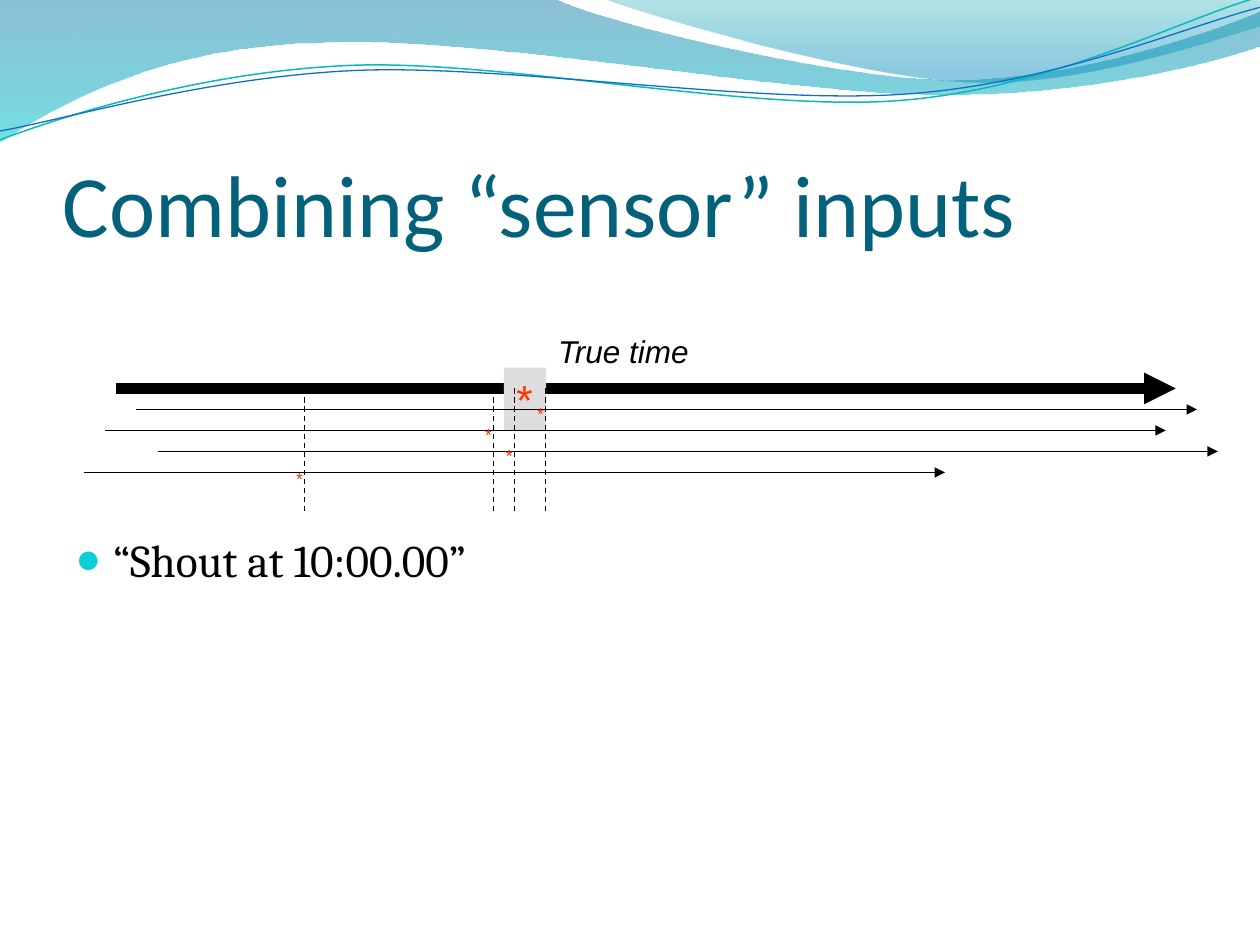
"""Build a slide on combining sensor inputs along a shared time line."""
import dataclasses

import lxml.etree
import pptx
import pptx.dml.color
import pptx.enum.dml
import pptx.enum.shapes
import pptx.enum.text
import pptx.oxml
import pptx.oxml.ns
import pptx.util

Cm = pptx.util.Cm
Pt = pptx.util.Pt
RGB = pptx.dml.color.RGBColor.from_string
qn = pptx.oxml.ns.qn


@dataclasses.dataclass(frozen=True)
class Theme:
    title: str = "04617B"
    ink: str = "000000"
    mark: str = "FF3300"
    window: str = "DDDDDD"
    bullet: str = "0BD0D9"
    teal_line: str = "0AB8BF"
    blue_line: str = "0F6FC6"
    left_wave: tuple = ((0, "0074A1", 45), (1, "00C6CF", 55))
    right_wave: tuple = ((0, "00A1A9", 30), (0.8, "008BBF", 45))
    title_size: int = 50
    body_size: int = 26
    mark_size: int = 24
    label_size: int = 18
    small_size: int = 10


theme = Theme()
deck = pptx.Presentation()
deck.slide_width, deck.slide_height = Cm(25.4), Cm(19.05)
page = deck.slides.add_slide(deck.slide_layouts[6])


def write(box, text, font, size, color, italic=False):
    frame = box.text_frame
    frame.word_wrap = True
    frame.text = text
    para = frame.paragraphs[0]
    para.alignment = pptx.enum.text.PP_ALIGN.LEFT
    span = para.runs[0]
    span.font.name, span.font.size = font, Pt(size)
    span.font.italic = italic
    span.font.color.rgb = RGB(color)
    return para


def draw_line(start, end, width, arrow=False):
    line = page.shapes.add_connector(
        pptx.enum.shapes.MSO_CONNECTOR.STRAIGHT, *(Cm(v) for v in start + end))
    line.line.color.rgb = RGB(theme.ink)
    line.line.width = Pt(width)
    if arrow:
        outline = line.line._get_or_add_ln()
        lxml.etree.SubElement(outline, qn("a:tailEnd"), type="triangle")
    else:
        line.line.dash_style = pptx.enum.dml.MSO_LINE.DASH
    lxml.etree.SubElement(line._element.spPr, qn("a:effectLst"))


waves = [
    ((0, -0.03), [
        [(11.18, -0.03)],
        [(12.09, 0.43), (16.87, 1.6), (19.25, 1.6)],
        [(21.67, 1.6), (24.33, 0.66), (25.4, 0.23)],
        [(25.43, 0.91)],
        [(24.97, 1.12), (22.1, 1.93), (18.95, 1.91)],
        [(15.8, 1.91), (9.7, 0.71), (6.53, 0.86)],
        [(3.28, 0.89), (1.17, 2.11), (-0.03, 2.87)]], theme.left_wave, None),
    ((12.17, -0.03), [
        [(12.93, 0.28), (17.32, 1.57), (19.53, 1.65)],
        [(21.74, 1.75), (24.41, 0.81), (25.4, 0.53)],
        [(25.4, 0)]], theme.right_wave, None),
    ((0, 2.82), [
        [(1.22, 2.36), (4.01, 1.45), (7.04, 1.32)],
        [(10.03, 1.19), (15.06, 2.26), (18.11, 2.03)],
        [(21.16, 1.8), (23.83, 0.38), (25.35, -0.05)]],
        None, (theme.teal_line, 0.85)),
    ((0, 2.64), [
        [(1.19, 2.44), (4.17, 1.55), (7.19, 1.42)],
        [(10.24, 1.3), (15.16, 2.11), (18.21, 1.9)],
        [(21.23, 1.7), (23.9, 0.53), (25.4, 0.15)]],
        None, (theme.blue_line, 0.75)),
]
for start, segments, gradient, stroke in waves:
    builder = page.shapes.build_freeform(Cm(start[0]), Cm(start[1]))
    builder.add_line_segments(
        [(Cm(x), Cm(y)) for segment in segments for x, y in segment],
        close=gradient is not None)
    wave = builder.convert_to_shape()
    wave.shadow.inherit = False
    steps = iter(list(wave._element.iter(qn("a:lnTo"))))
    for segment in segments:
        group = [next(steps) for _ in segment]
        if len(group) == 3:
            group[0].tag = qn("a:cubicBezTo")
            for step in group[1:]:
                group[0].append(step[0])
                step.getparent().remove(step)
    if gradient:
        wave.line.fill.background()
        wave.fill.gradient()
        wave.fill.gradient_angle = 270
        for stop, (position, color, opacity) in zip(wave.fill.gradient_stops, gradient):
            stop.position = position
            stop.color.rgb = RGB(color)
            lxml.etree.SubElement(stop._gs[0], qn("a:alpha"), val=str(opacity * 1000))
    else:
        wave.fill.background()
        wave.line.color.rgb = RGB(stroke[0])
        wave.line.width = Pt(stroke[1])

title = page.shapes.add_textbox(Cm(1.27), Cm(1.96), Cm(22.86), Cm(3.18))
write(title, "Combining “sensor” inputs", "Calibri", theme.title_size, theme.title)
title.text_frame.vertical_anchor = pptx.enum.text.MSO_ANCHOR.BOTTOM
title.text_frame.margin_left = title.text_frame.margin_right = 0
title.text_frame.margin_bottom = 0

body = page.shapes.add_textbox(Cm(1.27), Cm(5.38), Cm(22.86), Cm(12.19))
body.text_frame.margin_top = Cm(5.34)
para = write(body, "“Shout at 10:00.00”", "Cambria", theme.body_size, theme.ink)
layout = para._p.get_or_add_pPr()
layout.set("marL", str(Cm(0.76)))
layout.set("indent", str(-Cm(0.76)))
bullet_color = lxml.etree.SubElement(layout, qn("a:buClr"))
lxml.etree.SubElement(bullet_color, qn("a:srgbClr"), val=theme.bullet)
lxml.etree.SubElement(layout, qn("a:buSzPct"), val="95000")
lxml.etree.SubElement(layout, qn("a:buFont"), typeface="Arial")
lxml.etree.SubElement(layout, qn("a:buChar"), char="●")

true_time_y = 7.83
draw_line((2.33, true_time_y), (23.7, true_time_y), 6, arrow=True)
label = page.shapes.add_textbox(Cm(11), Cm(6.56), Cm(4.45), Cm(1.02))
write(label, "True time", "Arial", theme.label_size, theme.ink, italic=True)

window = page.shapes.add_shape(
    pptx.enum.shapes.MSO_SHAPE.RECTANGLE, Cm(10.16), Cm(7.41), Cm(0.85), Cm(1.27))
window.shadow.inherit = False
window.fill.solid()
window.fill.fore_color.rgb = RGB(theme.window)
window.line.fill.background()
write(window, "*", "Arial", theme.mark_size, theme.mark)
window.text_frame.vertical_anchor = pptx.enum.text.MSO_ANCHOR.TOP

sensors = [
    (2.75, 24.13, 11, 8),
    (2.12, 23.5, 9.95, 8.43),
    (3.18, 24.55, 10.37, 8.84),
    (1.69, 19.05, 6.14, 9.32),
]
for start_x, end_x, event_x, mark_y in sensors:
    draw_line((event_x, true_time_y), (event_x, 10.37), 0.75)
for row, (start_x, end_x, event_x, mark_y) in enumerate(sensors, 1):
    y = true_time_y + row * 1.27 / 3
    draw_line((start_x, y), (end_x, y), 1, arrow=True)
for start_x, end_x, event_x, mark_y in sensors:
    mark = page.shapes.add_textbox(Cm(event_x - 0.42), Cm(mark_y), Cm(0.69), Cm(0.69))
    write(mark, "*", "Arial", theme.small_size, theme.mark)

deck.save("out.pptx")
